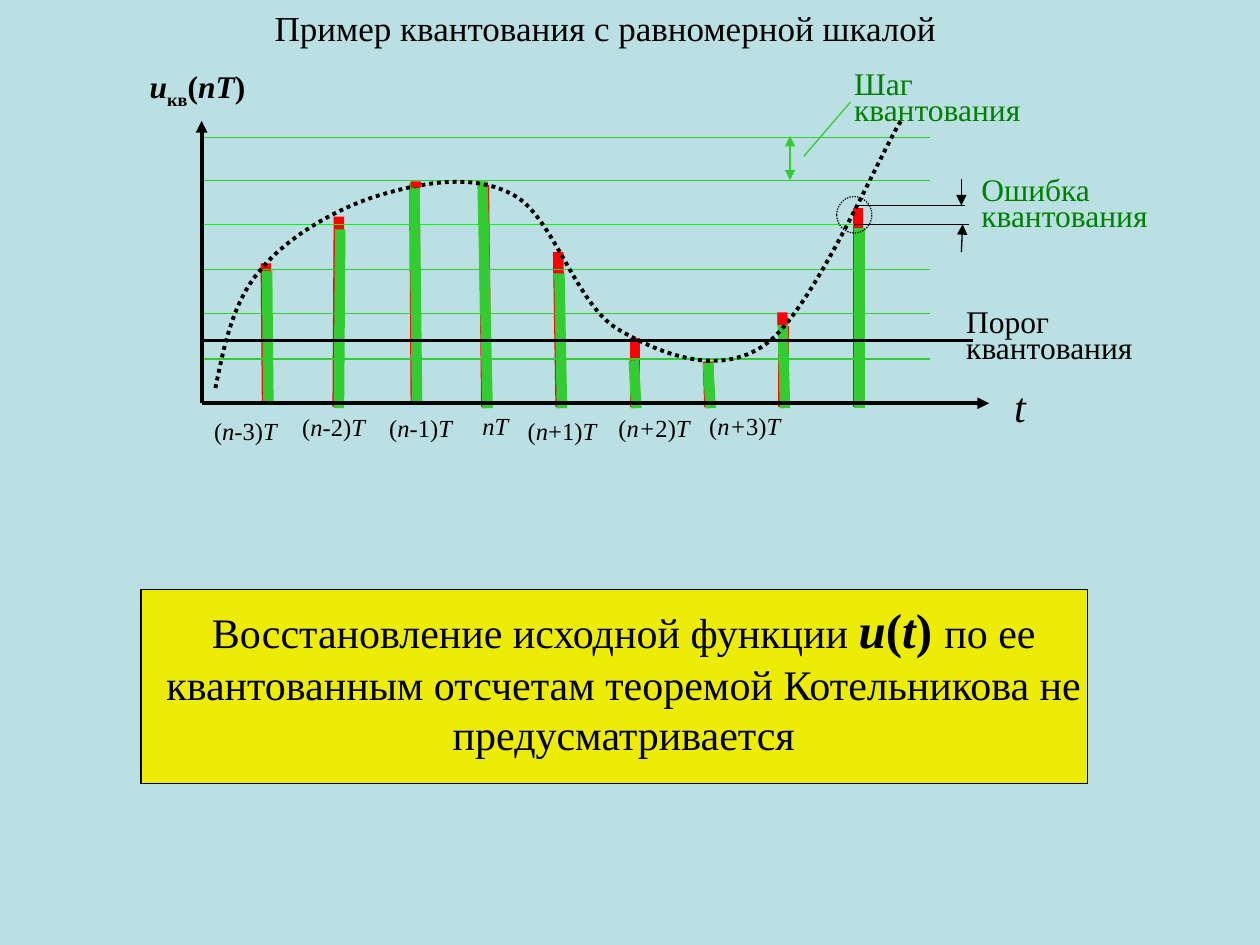
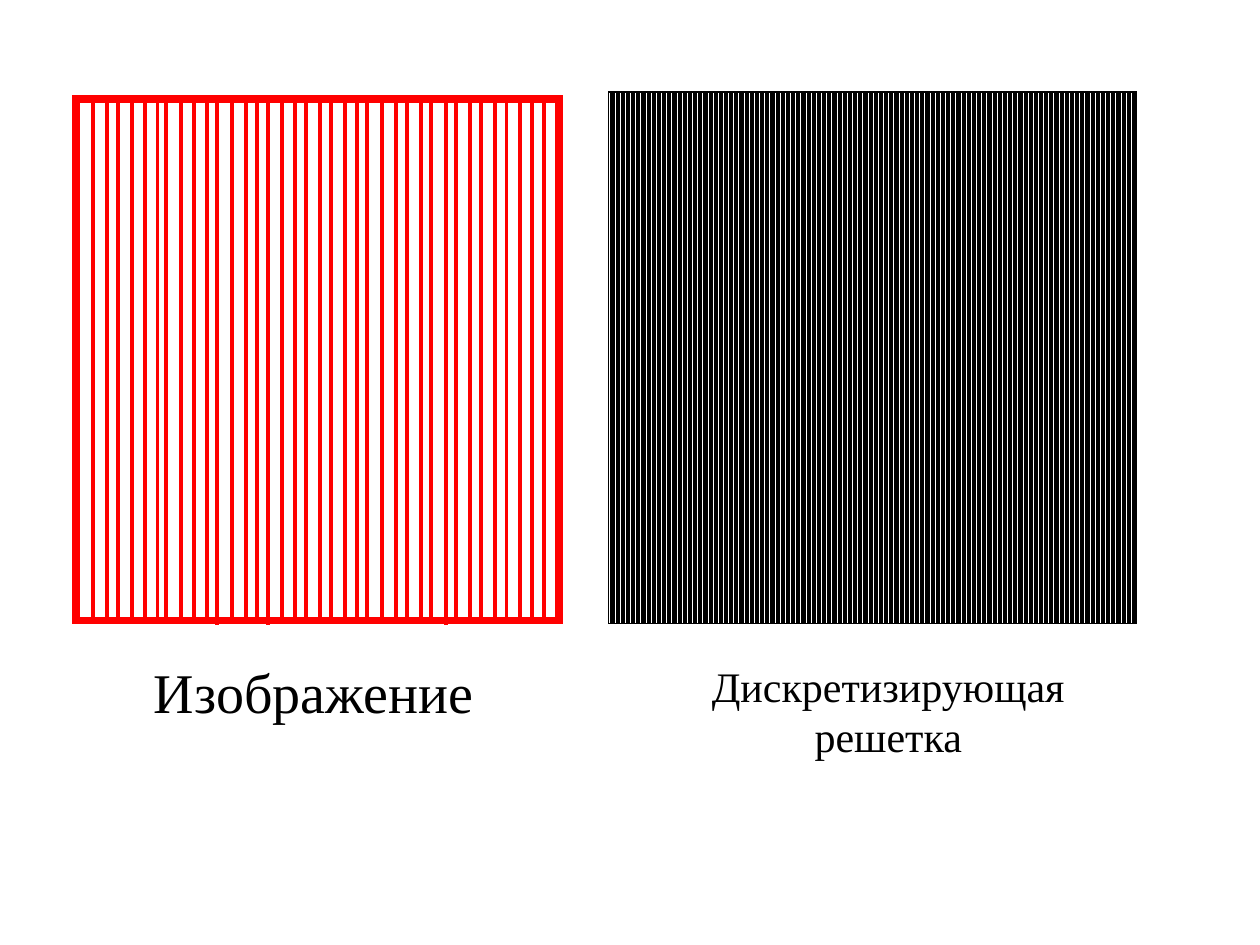
from lxml import etree
from pptx import Presentation
from pptx.dml.color import RGBColor
from pptx.enum.dml import MSO_LINE, MSO_PATTERN
from pptx.enum.shapes import MSO_CONNECTOR, MSO_SHAPE
from pptx.enum.text import PP_ALIGN
from pptx.oxml.ns import qn
from pptx.util import Pt

RECTANGLE, ELLIPSE = MSO_SHAPE.RECTANGLE, MSO_SHAPE.OVAL
STRAIGHT = MSO_CONNECTOR.STRAIGHT
DOTTED = MSO_LINE.ROUND_DOT
STRIPED = MSO_PATTERN.DARK_VERTICAL
LEFT, CENTER = PP_ALIGN.LEFT, PP_ALIGN.CENTER

BLACK = RGBColor(0x00, 0x00, 0x00)
WHITE = RGBColor(0xFF, 0xFF, 0xFF)
RED = RGBColor(0xFF, 0x00, 0x00)
GREEN = RGBColor(0x33, 0xCC, 0x33)
BRIGHT_GREEN = RGBColor(0x00, 0xFF, 0x00)
DARK_GREEN = RGBColor(0x00, 0x80, 0x00)
PALE_BLUE = RGBColor(0xBB, 0xE0, 0xE3)
YELLOW = RGBColor(0xEC, 0xEC, 0x06)

FONT = "Times New Roman"
PX = 9144  # 100 px to the inch
BLANK_LAYOUT = 6


class Painter:
    """Holds the style and the current slide."""

    def __init__(self, width, height):
        self.deck = Presentation()
        self.deck.slide_width = width * PX
        self.deck.slide_height = height * PX
        self.page = None

    def new_page(self):
        layout = self.deck.slide_layouts[BLANK_LAYOUT]
        self.page = self.deck.slides.add_slide(layout)

    def outline(self, line, color, width, dash=None):
        if color is None:
            line.fill.background()
            return
        line.color.rgb = color
        line.width = Pt(width)
        if dash is not None:
            line.dash_style = dash

    def shape(self, kind, x, y, width, height, fill=None, color=None,
              weight=0.75, dash=None, pattern=None, rotation=0):
        shape = self.page.shapes.add_shape(
            kind, x * PX, y * PX, width * PX, height * PX)
        shape.shadow.inherit = False
        shape.rotation = rotation
        if pattern is not None:
            shape.fill.patterned()
            shape.fill.pattern = pattern
            shape.fill.fore_color.rgb = fill
            shape.fill.back_color.rgb = WHITE
        elif fill is not None:
            shape.fill.solid()
            shape.fill.fore_color.rgb = fill
        else:
            shape.fill.background()
        self.outline(shape.line, color, weight, dash)
        if color is not None:
            # Sharp corners
            etree.SubElement(shape._element.spPr.find(qn("a:ln")),
                             qn("a:miter"), lim="800000")

    def line(self, x1, y1, x2, y2, color=BLACK, weight=0.75, arrows=()):
        line = self.page.shapes.add_connector(
            STRAIGHT, x1 * PX, y1 * PX, x2 * PX, y2 * PX)
        self.outline(line.line, color, weight)
        properties = line._element.spPr
        for end in arrows:
            etree.SubElement(properties.find(qn("a:ln")), qn("a:" + end),
                             type="triangle")
        etree.SubElement(properties, qn("a:effectLst"))

    def curve(self, start, segments, color, weight, dash):
        """Draws cubic segments, each given as two controls and an end."""
        builder = self.page.shapes.build_freeform(*start, scale=PX)
        builder.add_line_segments(
            [point for segment in segments for point in segment], close=False)
        curve = builder.convert_to_shape()
        curve.shadow.inherit = False
        curve.fill.background()
        self.outline(curve.line, color, weight, dash)
        # Turn every three straight steps into one cubic step
        steps = list(curve._element.iter(qn("a:lnTo")))
        for first in range(0, len(steps), 3):
            cubic = etree.Element(qn("a:cubicBezTo"))
            steps[first].addprevious(cubic)
            for step in steps[first:first + 3]:
                cubic.append(step[0])
                step.getparent().remove(step)

    def text(self, x, y, width, height, spans, size, color=BLACK,
             align=LEFT, spacing=None):
        """Spans are (text, style, size); style joins b, i and s (subscript)."""
        box = self.page.shapes.add_textbox(
            x * PX, y * PX, width * PX, height * PX)
        box.text_frame.word_wrap = True
        para = box.text_frame.paragraphs[0]
        para.alignment = align
        if spacing:
            para.line_spacing = spacing
        if isinstance(spans, str):
            spans = [(spans, "")]
        for words, style, *own_size in spans:
            span = para.add_run()
            span.text = words
            font = span.font
            font.name = FONT
            font.size = Pt(own_size[0] if own_size else size)
            font.color.rgb = color
            font.bold = "b" in style
            font.italic = "i" in style
            if "s" in style:
                span._r.get_or_add_rPr().set("baseline", "-25000")


# Samples: top x, foot x and top y of the red bar, the same for the green bar,
# then the foot of the red bar
SAMPLES = [
    (269, 268, 172, 270, 269, 182, 323),
    (384, 386, 147, 383, 387, 144, 323),
    (443, 445, 200, 444, 446, 217, 323),
    (504, 504, 268, 503, 505, 286, 323),
    (562, 563, 287, 562, 564, 288, 323),
    (622, 622, 259, 621, 623, 250, 323),
    (681, 681, 165, 682, 682, 181, 323),
    (211, 212, 209, 212, 213, 215, 319),
    (329, 330, 151, 329, 331, 145, 319),
]

# Time labels: left, top, width, shift of n
TIME_LABELS = [
    (299, 323, 81, "n-", "1)"),
    (230, 322, 81, "n-", "2)"),
    (160, 325, 81, "n-", "3)"),
    (409, 325, 84, "n", "+1)"),
    (481, 323, 89, "n+", "2)"),
    (553, 321, 90, "n+", "3)"),
]

LEVELS = [
    (285, GREEN, 0.75), (249, GREEN, 0.75), (214, GREEN, 1),
    (178, BRIGHT_GREEN, 0.75), (143, GREEN, 0.75), (109, GREEN, 0.75),
]

SIGNAL_START = (171, 308)
SIGNAL = [
    ((178, 274), (185, 239), (207, 214)),
    ((228, 188), (268, 165), (301, 155)),
    ((335, 145), (376, 137), (408, 155)),
    ((439, 172), (457, 241), (490, 261)),
    ((524, 281), (571, 300), (608, 273)),
    ((646, 245), (697, 125), (715, 96)),
]

# Uneven stripes of the image: x and top
UNEVEN_STRIPES = [
    (74, 77), (94, 76), (115, 77), (132, 78), (154, 79), (172, 81), (195, 78),
    (213, 81), (234, 78), (254, 79), (274, 78), (291, 79), (314, 80),
    (334, 77), (354, 81), (373, 80), (393, 79), (413, 80), (432, 77),
]


def quantization_slide(painter):
    painter.new_page()
    painter.shape(RECTANGLE, 0, 0, 1019, 750, PALE_BLUE)

    # Exact samples and their times
    for top_x, foot_x, top, _, _, _, foot in SAMPLES:
        painter.line(top_x, top, foot_x, foot, RED, 6)
    for x, y, width, index, shift in TIME_LABELS:
        painter.text(x, y, width, 33,
                     [("(", ""), (index, "i"), (shift, ""), ("T", "i")], 14)
    painter.text(373, 321, 56, 33, [("nT", "i")], 14)

    # Quantization step and title
    painter.line(627, 108, 627, 143, GREEN, arrows=("headEnd", "tailEnd"))
    painter.text(668, 54, 162, 52, "Шаг квантования", 18, DARK_GREEN,
                 spacing=0.7)
    painter.line(638, 124, 675, 81, GREEN)
    painter.text(70, 0, 821, 43, "Пример квантования с равномерной шкалой",
                 20, align=CENTER)

    # Levels and quantized samples
    for y, color, weight in LEVELS:
        painter.line(160, y, 738, y, color, weight)
    for _, _, _, top_x, foot_x, top, foot in SAMPLES:
        painter.line(top_x, top, foot_x, foot + 1, GREEN, 6)

    # Conclusion
    painter.shape(RECTANGLE, 112, 468, 751, 154, YELLOW, BLACK)
    painter.text(119, 471, 752, 137, [
        ("Восстановление исходной функции ", ""),
        ("u", "bi", 28), ("(", "b", 28), ("t", "bi", 28), (") ", "b", 28),
        ("по ее квантованным отсчетам теоремой Котельникова "
         "не предусматривается", ""),
    ], 24, align=CENTER)

    # Quantization error
    painter.line(679, 163, 766, 163)
    painter.line(678, 178, 769, 178)
    painter.line(763, 142, 763, 163, arrows=("tailEnd",))
    painter.line(764, 178, 763, 200, arrows=("headEnd",))
    painter.text(769, 138, 157, 52, "Ошибка квантования", 18, DARK_GREEN,
                 spacing=0.7)
    painter.shape(ELLIPSE, 664, 156, 28, 29, color=BLACK, dash=DOTTED)

    # Signal and axes
    painter.curve(SIGNAL_START, SIGNAL, BLACK, 2.25, DOTTED)
    for end_x, end_y in ((160, 96), (785, 320)):
        painter.line(160, 320, end_x, end_y, weight=2.25, arrows=("tailEnd",))
    painter.text(109, 48, 120, 39, [
        ("u", "bi"), ("кв", "bs"), ("(", "b"), ("nT", "bi"), (")", "b")], 18)
    painter.text(795, 297, 41, 50, [("t", "i")], 24)

    # Threshold
    painter.line(159, 270, 772, 270, weight=1.5)
    painter.text(757, 243, 159, 60, "Порог квантования", 18, spacing=0.7)

    # Red tips over the quantized samples
    painter.shape(RECTANGLE, 617, 248, 8, 10, RED)
    painter.shape(RECTANGLE, 326, 144, 8, 5, RED)


def sampling_slide(painter):
    painter.new_page()

    # Sampling grid
    painter.shape(RECTANGLE, 483, 73, 419, 422, BLACK, BLACK, pattern=STRIPED)

    # Striped image
    painter.shape(RECTANGLE, 45, 94, 414, 383, color=RED, weight=4.5,
                  rotation=90)
    even_stripes = [(round(85 + 19.8 * step), 77) for step in range(18)]
    for x, top in even_stripes[::-1] + UNEVEN_STRIPES[::-1]:
        painter.line(x, top, x, top + 415, RED, 2.25)

    # Captions
    painter.text(77, 517, 344, 63, "Изображение", 32, align=CENTER)
    painter.text(502, 519, 406, 90, "Дискретизирующая решетка", 24,
                 align=CENTER)


def main():
    painter = Painter(1000, 750)
    quantization_slide(painter)
    sampling_slide(painter)
    painter.deck.save("out.pptx")


if __name__ == "__main__":
    main()
